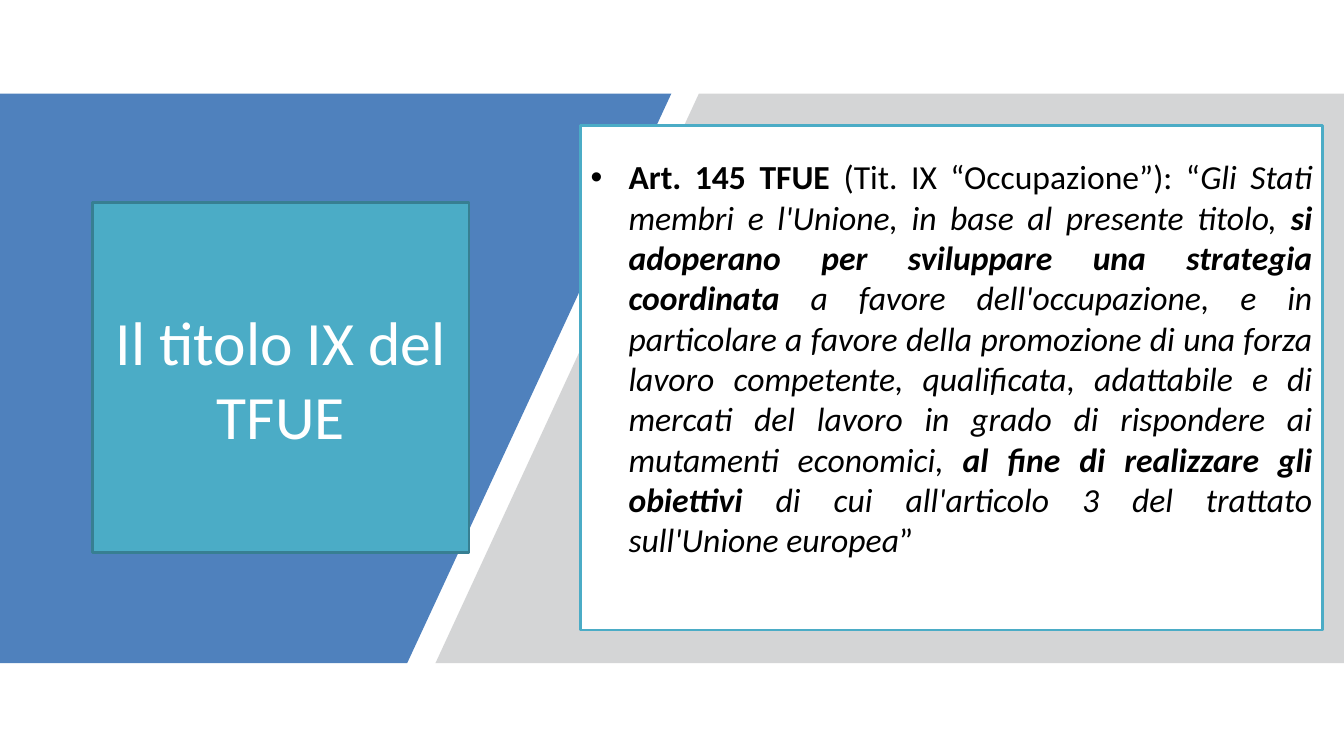
from pptx import Presentation
from pptx.dml.color import RGBColor
from pptx.enum.text import MSO_ANCHOR, MSO_AUTO_SIZE, PP_ALIGN
from pptx.oxml.ns import qn
from pptx.util import Inches, Pt
from lxml import etree

CENTER, JUSTIFY = PP_ALIGN.CENTER, PP_ALIGN.JUSTIFY
MIDDLE = MSO_ANCHOR.MIDDLE
NO_AUTOFIT = MSO_AUTO_SIZE.NONE
BLUE = RGBColor(0x4F, 0x81, 0xBD)
GREY = RGBColor(0xAB, 0xAD, 0xAF)
TEAL = RGBColor(0x4B, 0xAC, 0xC6)
DARK_TEAL = RGBColor(0x37, 0x7F, 0x92)
WHITE = RGBColor(0xFF, 0xFF, 0xFF)
BLACK = RGBColor(0x00, 0x00, 0x00)

BAND_TOP, BAND_BOTTOM = 12.4, 87.73
ARTICLE = [
    ("Art. 145 TFUE ", True, False),
    ("(Tit. IX “Occupazione”): “", False, False),
    ("Gli Stati membri e l'Unione, in base al presente titolo, ", False, True),
    ("si adoperano per sviluppare una strategia coordinata ", True, True),
    ("a favore dell'occupazione, e in particolare a favore della promozione "
     "di una forza lavoro competente, qualificata, adattabile e di mercati "
     "del lavoro in grado di rispondere ai mutamenti economici, ", False, True),
    ("al fine di realizzare gli obiettivi ", True, True),
    ("di cui all'articolo 3 del trattato sull'Unione europea", False, True),
    ("”", False, False),
]


class SlideBuilder:
    font = "Calibri"

    def __init__(self, deck):
        self.column = deck.slide_width / 100
        self.row = deck.slide_height / 100
        self.slide = deck.slides.add_slide(deck.slide_layouts[1])

    def point(self, column, row):
        return round(column * self.column), round(row * self.row)

    def band(self, corners, color, opacity=100):
        start, *others = [self.point(*corner) for corner in corners]
        outline = self.slide.shapes.build_freeform(*start)
        outline.add_line_segments(others, close=True)
        band = outline.convert_to_shape()
        band.shadow.inherit = False
        band.fill.solid()
        band.fill.fore_color.rgb = color
        band.line.fill.background()
        if opacity < 100:
            tint = band._element.spPr.find(qn("a:solidFill"))[0]
            etree.SubElement(tint, qn("a:alpha"), val=str(opacity * 1000))
        self.slide.shapes.title._element.addprevious(band._element)

    def panel(self, index, origin, size, fill, border, passages, points, color, align):
        panel = self.slide.placeholders[index]
        panel.left, panel.top = self.point(*origin)
        panel.width, panel.height = self.point(*size)
        panel.fill.solid()
        panel.fill.fore_color.rgb = fill
        panel.line.color.rgb = border
        panel.line.width = Pt(2)
        frame = panel.text_frame
        frame.word_wrap = True
        frame.auto_size = NO_AUTOFIT
        frame.vertical_anchor = MIDDLE
        paragraph = frame.paragraphs[0]
        paragraph.alignment = align
        for words, bold, italic in passages:
            run = paragraph.add_run()
            run.text = words
            run.font.name = self.font
            run.font.size = Pt(points)
            run.font.color.rgb = color
            run.font.bold = bold
            run.font.italic = italic
        return frame


def main():
    deck = Presentation()
    deck.slide_width, deck.slide_height = Inches(13.33), Inches(7.5)
    builder = SlideBuilder(deck)
    builder.band([(0, BAND_TOP), (49.95, BAND_TOP),
                  (30.3, BAND_BOTTOM), (0, BAND_BOTTOM)], BLUE)
    builder.band([(52, BAND_TOP), (100, BAND_TOP),
                  (100, BAND_BOTTOM), (32.4, BAND_BOTTOM)], GREY, 50)
    builder.panel(0, (6.9, 26.8), (28, 46.27), TEAL, DARK_TEAL,
                  [("Il titolo IX del TFUE", False, False)], 44, WHITE, CENTER)
    article = builder.panel(1, (43.2, 16.55), (55.2, 66.8), WHITE, TEAL,
                            ARTICLE, 24, BLACK, JUSTIFY)
    article.margin_bottom = Inches(0.44)
    deck.save("out.pptx")


if __name__ == "__main__":
    main()
